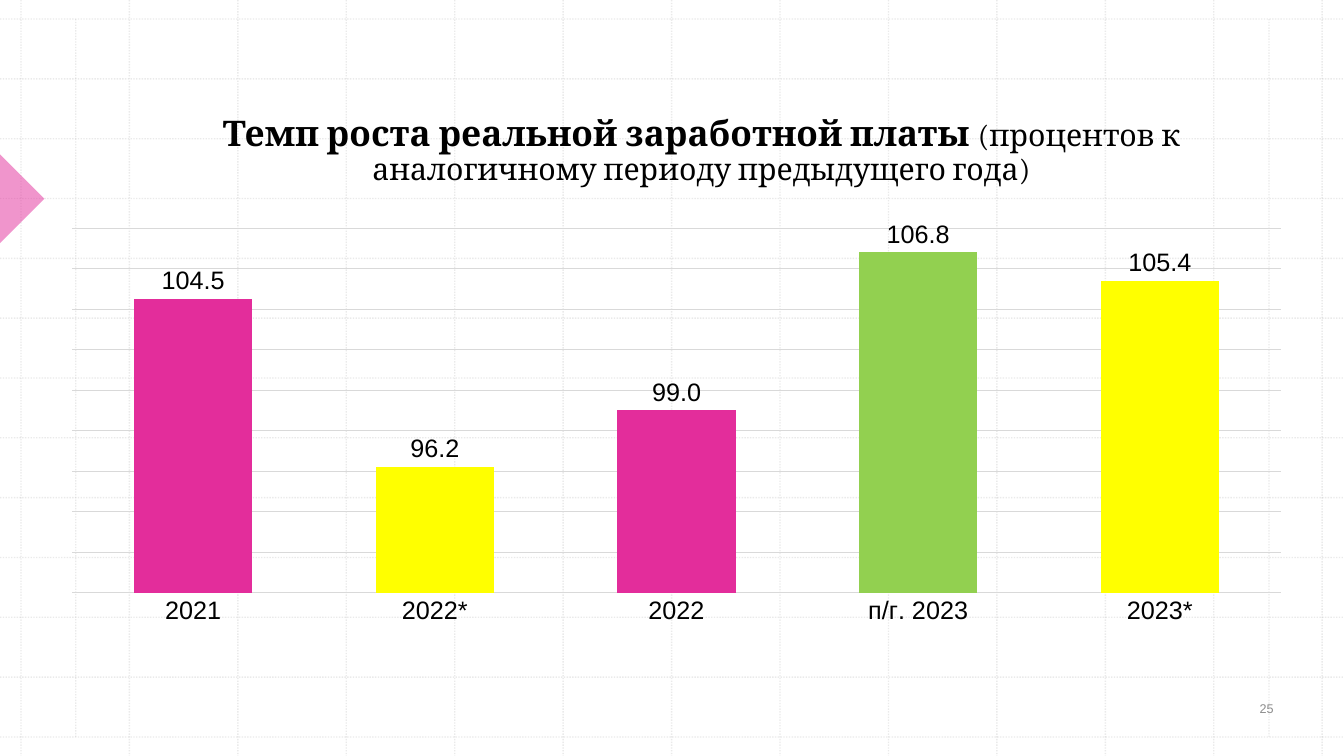
import pptx
import pptx.chart.data
import pptx.dml.color
import pptx.enum.chart
import pptx.enum.dml
import pptx.enum.shapes
import pptx.enum.text
import pptx.oxml
import pptx.oxml.ns
import pptx.util
from lxml import etree

Cm = pptx.util.Cm
Pt = pptx.util.Pt
qn = pptx.oxml.ns.qn

WIDE, HIGH = 33.87, 19.05
COLORS = {"grid": "BCBCBC", "pink": "E32D9B", "yellow": "FFFF00",
          "green": "92D050", "axis": "D9D9D9", "text": "000000",
          "page": "8C8C8C"}
BARS = [("2021", 104.5, "pink"), ("2022*", 96.2, "yellow"),
        ("2022", 99.0, "pink"), ("п/г. 2023", 106.8, "green"),
        ("2023*", 105.4, "yellow")]


def tint(name):
    return pptx.dml.color.RGBColor.from_string(COLORS[name])


def fade(node, part):
    """Set the opacity, in percent, of the solid colour under node."""
    color = next(node.iter(qn("a:srgbClr")))
    etree.SubElement(color, qn("a:alpha")).set("val", str(part * 1000))


def style(font, size, color, name="Arial", bold=False):
    font.size = Pt(size)
    font.name = name
    font.bold = bold
    font.color.rgb = tint(color)


def add_line(slide, x1, y1, x2, y2):
    kind = pptx.enum.shapes.MSO_CONNECTOR.STRAIGHT
    line = slide.shapes.add_connector(kind, Cm(x1), Cm(y1), Cm(x2), Cm(y2))
    line.line.width = Pt(1)
    line.line.color.rgb = tint("grid")
    line.line.dash_style = pptx.enum.dml.MSO_LINE.ROUND_DOT
    props = line._element.spPr
    fade(props, 30)
    etree.SubElement(props, qn("a:effectLst"))


def add_grid(slide):
    left, right, top, low, steps = 0.53, 33.32, 0.48, 18.57, 12
    for i in range(steps + 1):
        x = left + i * (right - left) / steps
        y = top + i * (low - top) / steps
        add_line(slide, x, 0, x, HIGH)
        add_line(slide, 0, y, WIDE, y)
    # Margin lines
    for x in (1.91, 31.98):
        add_line(slide, x, top, x, low)


def add_mark(slide):
    kind = pptx.enum.shapes.MSO_SHAPE.RIGHT_TRIANGLE
    mark = slide.shapes.add_shape(kind, Cm(-0.79), Cm(4.22), Cm(1.58), Cm(1.58))
    mark.rotation = 225
    mark.shadow.inherit = False
    mark.fill.solid()
    mark.fill.fore_color.rgb = tint("pink")
    fade(mark._element.spPr, 50)
    mark.line.fill.background()


def add_text(slide, place, runs, anchor):
    box = slide.shapes.add_textbox(*[Cm(n) for n in place])
    frame = box.text_frame
    frame.word_wrap = True
    frame.vertical_anchor = anchor
    para = frame.paragraphs[0]
    para.alignment = pptx.enum.text.PP_ALIGN.CENTER
    for text, look in runs:
        run = para.add_run()
        run.text = text
        style(run.font, *look)
    return para


def set_plot(chart, x, y, w, h):
    """Fix the inner plot area as shares of the chart frame."""
    area = chart._chartSpace.chart.plotArea
    for old in area.findall(qn("c:layout")):
        area.remove(old)
    layout = etree.Element(qn("c:layout"))
    area.insert(0, layout)
    manual = etree.SubElement(layout, qn("c:manualLayout"))
    for tag, value in (("layoutTarget", "inner"), ("xMode", "edge"),
                       ("yMode", "edge"), ("x", x), ("y", y),
                       ("w", w), ("h", h)):
        etree.SubElement(manual, qn("c:" + tag)).set("val", str(value))


def add_bars(slide):
    enum = pptx.enum.chart
    data = pptx.chart.data.CategoryChartData(number_format="#,##0.0")
    data.categories = [name for name, _, _ in BARS]
    data.add_series("Series 1", [value for _, value, _ in BARS])
    chart = slide.shapes.add_chart(
        enum.XL_CHART_TYPE.COLUMN_CLUSTERED,
        Cm(1.19), Cm(5.54), Cm(31.72), Cm(10.44), data).chart
    chart.has_legend = False
    chart.has_title = False
    style(chart.font, 18, "text")
    set_plot(chart, 0.02, 0.02, 0.96, 0.88)

    # Bars and their labels
    plot = chart.plots[0]
    plot.vary_by_categories = False
    plot.gap_width = 104
    plot.overlap = -27
    series = plot.series[0]
    series.invert_if_negative = False
    series.format.fill.solid()
    series.format.fill.fore_color.rgb = tint("pink")
    for i, (_, _, color) in enumerate(BARS):
        if color != "pink":
            fill = series.points[i].format.fill
            fill.solid()
            fill.fore_color.rgb = tint(color)
    labels = series.data_labels
    labels.show_value = True
    labels.number_format = "#,##0.0"
    labels.number_format_is_linked = False
    labels.position = enum.XL_LABEL_POSITION.OUTSIDE_END
    style(labels.font, 18, "text")

    # Axes
    cats, vals = chart.category_axis, chart.value_axis
    cats.major_tick_mark = enum.XL_TICK_MARK.NONE
    style(cats.tick_labels.font, 18, "text")
    vals.visible = False
    vals.minimum_scale = 90
    vals.maximum_scale = 108
    vals.major_unit = 2
    vals.has_major_gridlines = True
    for line in (cats.format.line, vals.major_gridlines.format.line):
        line.width = Pt(0.75)
        line.color.rgb = tint("axis")


def main():
    deck = pptx.Presentation()
    deck.slide_width, deck.slide_height = Cm(WIDE), Cm(HIGH)
    slide = deck.slides.add_slide(deck.slide_layouts[6])
    anchor = pptx.enum.text.MSO_ANCHOR

    # Backdrop
    add_grid(slide)
    add_mark(slide)

    # Heading
    head = add_text(slide, (2.54, 2.72, 30.28, 2.11), [
        ("Темп роста реальной заработной платы ",
         (25.2, "text", "Cambria", True)),
        ("(процентов к аналогичному периоду предыдущего года)",
         (21.6, "text", "Cambria")),
    ], anchor.BOTTOM)
    head.line_spacing = 0.9

    # Page number and chart
    add_text(slide, (30.56, 17.27, 2.72, 1.17), [("25", (9, "page"))],
             anchor.MIDDLE)
    add_bars(slide)
    deck.save("out.pptx")


if __name__ == "__main__":
    main()
